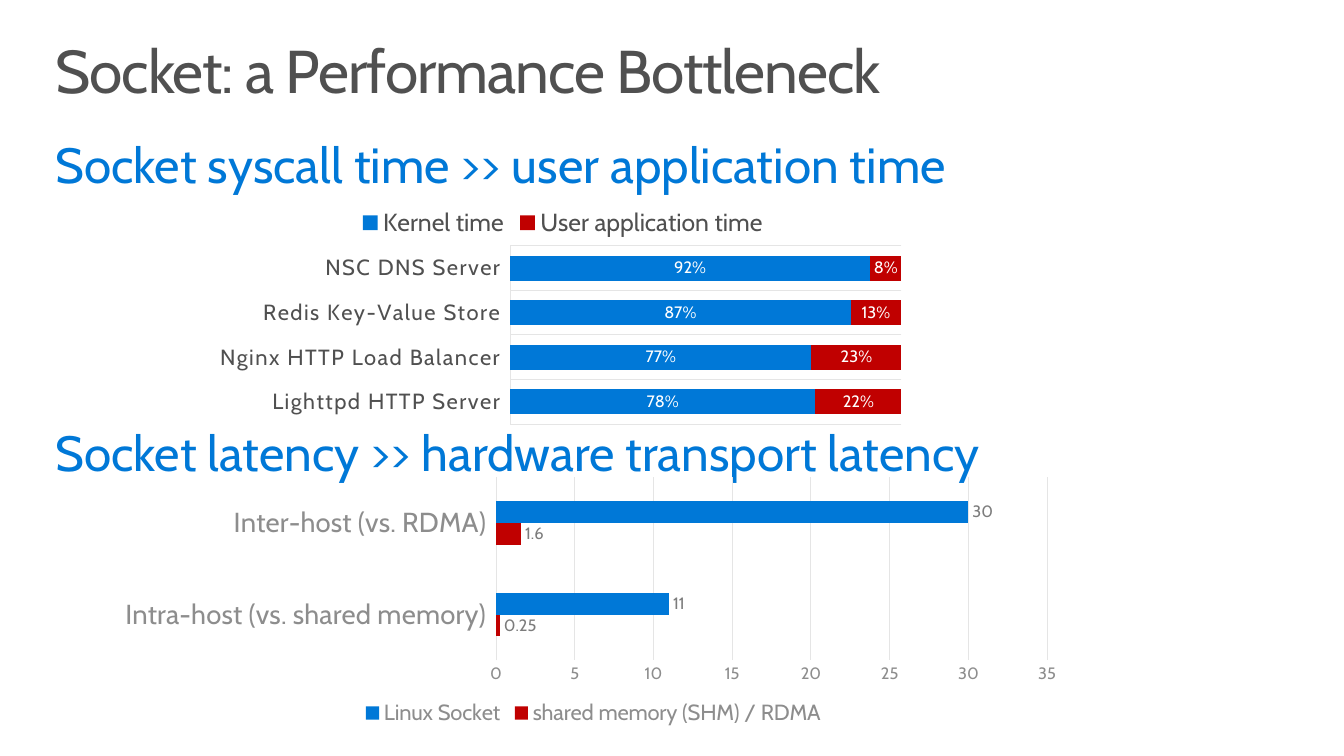
from dataclasses import dataclass

from lxml.etree import SubElement
from pptx import Presentation
from pptx.chart.data import CategoryChartData
from pptx.dml.color import RGBColor
from pptx.enum.chart import (XL_CHART_TYPE, XL_LABEL_POSITION,
                             XL_LEGEND_POSITION, XL_TICK_LABEL_POSITION,
                             XL_TICK_MARK)
from pptx.enum.text import MSO_ANCHOR, MSO_AUTO_SIZE, PP_ALIGN
from pptx.oxml.ns import qn
from pptx.util import Inches, Pt

# Content
TITLE = "Socket: a Performance Bottleneck"
HEADINGS = ["Socket syscall time >> user application time",
            "Socket latency >> hardware transport latency"]
SERVERS = ["Lighttpd HTTP Server", "Nginx HTTP Load Balancer",
           "Redis Key-Value Store", "NSC DNS Server"]
CPU_TIME = {"Kernel time": (0.78, 0.77, 0.87, 0.92),
            "User application time": (0.22, 0.23, 0.13, 0.08)}
PATHS = ["Intra-host (vs. shared memory)", "Inter-host (vs. RDMA)"]
LATENCY = {"shared memory (SHM) / RDMA": (0.25, 1.6),
           "Linux Socket": (11, 30)}


@dataclass(frozen=True)
class Theme:
    font: str = "Cabin"
    blue: str = "0078D7"
    red: str = "C00000"
    dark: str = "505050"
    gray: str = "8D8D8D"
    label: str = "7C7C7C"
    grid: str = "E5E5E5"
    white: str = "FFFFFF"
    title: int = 44
    heading: int = 36
    small: int = 12


T = Theme()


def style(font, size, color, spacing=None):
    font.name, font.size, font.bold = T.font, Pt(size), False
    font.color.rgb = RGBColor.from_string(color)
    if spacing is not None:
        font._rPr.set("spc", str(spacing))


def write(sp, text, size, color, box, inset=0.18, spacing=None, grow=False):
    sp.left, sp.top, sp.width, sp.height = map(Inches, box)
    tf = sp.text_frame
    tf.word_wrap = True
    tf.auto_size = MSO_AUTO_SIZE.SHAPE_TO_FIT_TEXT if grow else MSO_AUTO_SIZE.NONE
    tf.vertical_anchor = MSO_ANCHOR.TOP
    tf.margin_left = tf.margin_right = Inches(inset)
    tf.margin_top = tf.margin_bottom = Inches(0.1)
    p = tf.paragraphs[0]
    pPr = p._p.get_or_add_pPr()
    pPr.set("marL", "0")
    pPr.set("indent", "0")
    SubElement(pPr, qn("a:buNone"))
    p.alignment, p.line_spacing, p.space_before = PP_ALIGN.LEFT, 0.9, Pt(0)
    r = p.add_run()
    r.text = text
    style(r.font, size, color, spacing)


def grid_line(fmt):
    fmt.line.color.rgb = RGBColor.from_string(T.grid)
    fmt.line.width = Pt(0.75)


def place_plot(chart, area):
    plot_area = chart._chartSpace.chart.plotArea
    for old in plot_area.findall(qn("c:layout")):
        plot_area.remove(old)
    layout = SubElement(plot_area, qn("c:layout"))
    plot_area.insert(0, layout)
    manual = SubElement(layout, qn("c:manualLayout"))
    values = [("layoutTarget", "inner"), ("xMode", "edge"), ("yMode", "edge"),
              *zip("xywh", area)]
    for tag, val in values:
        SubElement(manual, qn("c:" + tag)).set("val", str(val))


def add_bars(kind, cats, series, colors, box, plot_at, gap, overlap, cat_font,
             legend_font, legend_at, label_color, label_at, fmt="General"):
    data = CategoryChartData(number_format=fmt)
    data.categories = cats
    for name, vals in series.items():
        data.add_series(name, vals)
    chart = s.shapes.add_chart(kind, *map(Inches, box), data).chart
    style(chart.font, 10, T.dark)
    chart.has_title = False
    chart.has_legend = True
    chart.legend.position = legend_at
    chart.legend.include_in_layout = False
    style(chart.legend.font, *legend_font)
    place_plot(chart, plot_at)

    plot = chart.plots[0]
    plot.gap_width, plot.overlap, plot.vary_by_categories = gap, overlap, False
    for ser, color in zip(plot.series, colors):
        ser.format.fill.solid()
        ser.format.fill.fore_color.rgb = RGBColor.from_string(color)
        labels = ser.data_labels
        labels.show_value = True
        labels.number_format, labels.number_format_is_linked = fmt, False
        labels.position = label_at
        style(labels.font, T.small, label_color)

    cat = chart.category_axis
    cat.major_tick_mark = XL_TICK_MARK.NONE
    cat.tick_label_position = XL_TICK_LABEL_POSITION.LOW
    grid_line(cat.format)
    style(cat.tick_labels.font, *cat_font)
    chart.value_axis.minimum_scale = 0
    return chart


prs = Presentation()
prs.slide_width, prs.slide_height = Inches(13.6), Inches(7.65)
s = prs.slides.add_slide(prs.slide_layouts[1])

# Title and headings
write(s.shapes.title, TITLE, T.title, T.dark, (0.4, 0.32, 12.8, 1),
      inset=0.16, spacing=-80)
heading_shapes = [s.placeholders[1], s.shapes.add_textbox(0, 0, 0, 0)]
for sp, text, top in zip(heading_shapes, HEADINGS, (1.33, 4.24)):
    write(sp, text, T.heading, T.blue, (0.38, top, 9.9, 0.75), grow=True)

# Share of CPU time
chart = add_bars(
    XL_CHART_TYPE.BAR_STACKED_100, SERVERS, CPU_TIME, (T.blue, T.red),
    box=(2.14, 1.98, 7.11, 2.36), plot_at=(0.425, 0.216, 0.557, 0.764),
    gap=79, overlap=100, cat_font=(16, T.dark, 120), legend_font=(18, T.dark),
    legend_at=XL_LEGEND_POSITION.TOP, label_color=T.white,
    label_at=XL_LABEL_POSITION.CENTER, fmt="0%")
chart.category_axis.has_major_gridlines = True
grid_line(chart.category_axis.major_gridlines.format)
chart.value_axis.maximum_scale = 1
chart.value_axis.has_major_gridlines = False
chart.value_axis.visible = False

# Latency
chart = add_bars(
    XL_CHART_TYPE.BAR_CLUSTERED, PATHS, LATENCY, (T.red, T.blue),
    box=(1.13, 4.77, 9.75, 2.62), plot_at=(0.399, 0.023, 0.572, 0.707),
    gap=219, overlap=0, cat_font=(20, T.gray), legend_font=(16, T.gray),
    legend_at=XL_LEGEND_POSITION.BOTTOM, label_color=T.label,
    label_at=XL_LABEL_POSITION.OUTSIDE_END)
val = chart.value_axis
val.maximum_scale, val.major_unit = 35, 5
val.major_tick_mark = XL_TICK_MARK.NONE
val.format.line.fill.background()
val.has_major_gridlines = True
grid_line(val.major_gridlines.format)
style(val.tick_labels.font, T.small, T.gray)

prs.save("out.pptx")
